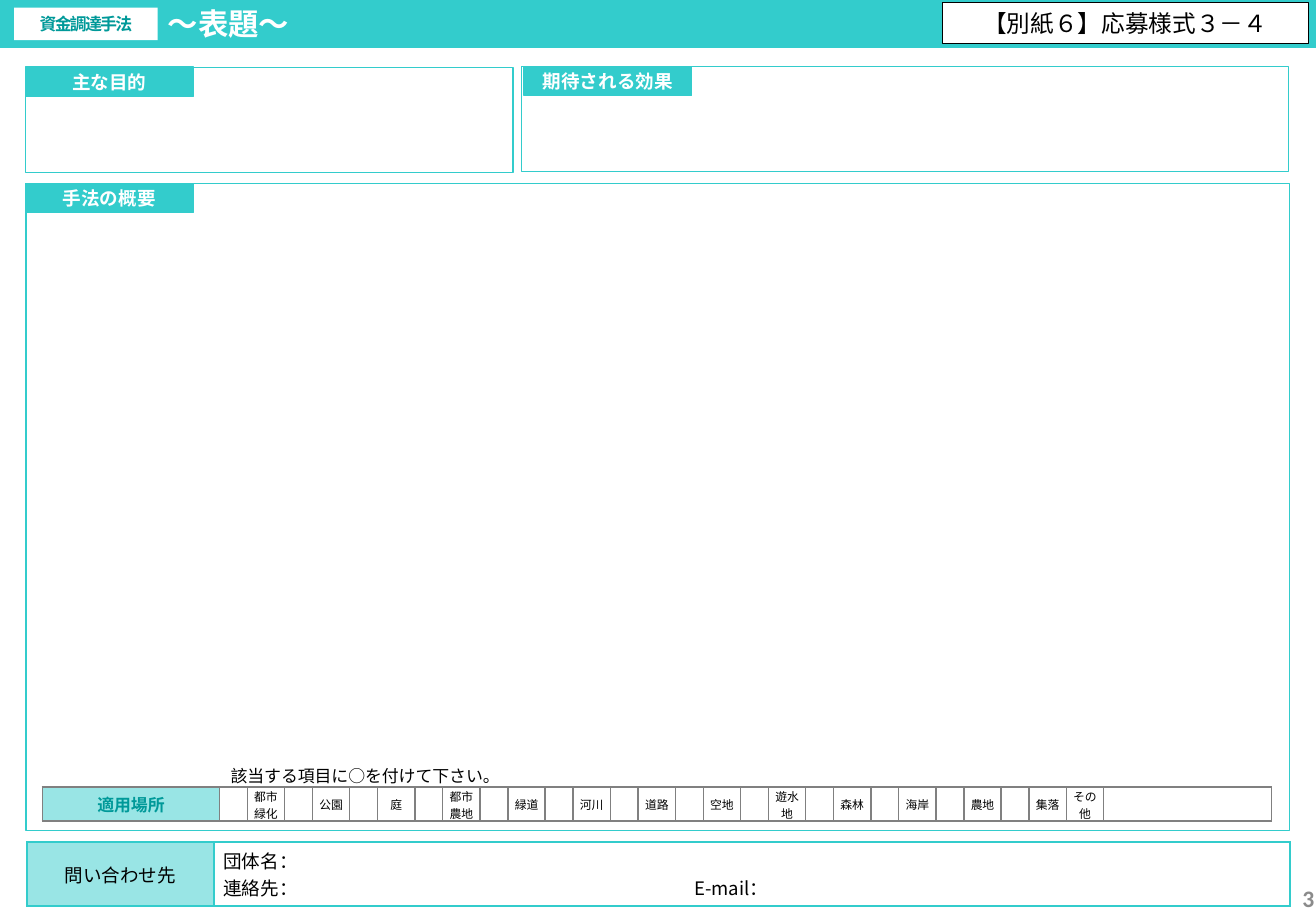
from pptx import Presentation
from pptx.dml.color import RGBColor
from pptx.enum.shapes import MSO_SHAPE
from pptx.enum.text import MSO_ANCHOR, PP_ALIGN
from pptx.oxml.ns import qn
from pptx.util import Pt
from lxml.etree import SubElement

TEAL = RGBColor(0x33, 0xCC, 0xCC)
PALE_TEAL = RGBColor(0x99, 0xE5, 0xE5)
DARK_TEAL = RGBColor(0x00, 0x99, 0x99)
WHITE = RGBColor(0xFF, 0xFF, 0xFF)
BLACK = RGBColor(0x00, 0x00, 0x00)
GRAY = RGBColor(0x80, 0x80, 0x80)
PAGE_GRAY = RGBColor(0x8B, 0x8B, 0x8B)
JAPANESE = "Noto Sans CJK JP"
SIDES = ("left", "top", "right", "bottom")
PLACES = ["都市\n緑化", "公園", "庭", "都市\n農地", "緑道", "河川", "道路",
          "空地", "遊水地", "森林", "海岸", "農地", "集落"]


def apply(target, values):
    """Set each attribute named in values on the target."""
    for name, value in values.items():
        setattr(target, name, value)


def write(holder, text, size, color=BLACK, bold=False, align=PP_ALIGN.CENTER,
          insets=(0, 0, 0, 0), font=JAPANESE, spacing=0):
    """Write text, one paragraph a line, into a shape's frame or a cell."""
    apply(holder, {f"margin_{side}": Pt(inset) for side, inset in zip(SIDES, insets)})
    holder.vertical_anchor = MSO_ANCHOR.MIDDLE
    frame = getattr(holder, "text_frame", holder)
    frame.word_wrap = True
    for index, line in enumerate(text.split("\n")):
        para = frame.add_paragraph() if index else frame.paragraphs[0]
        para.alignment = align
        if not line:
            para._p.get_or_add_endParaRPr().set("sz", str(size * 100))
            continue
        span = para.add_run()
        span.text = line
        apply(span.font, {"size": Pt(size), "bold": bold, "name": font})
        span.font.color.rgb = color
        properties = span._r.get_or_add_rPr()
        SubElement(properties, qn("a:ea"), typeface=font)
        if spacing:
            properties.set("spc", str(spacing * 100))


def add_box(page, place, fill, line=None, width=0.75):
    """Add a plain rectangle and return its text frame."""
    box = page.shapes.add_shape(MSO_SHAPE.RECTANGLE, *map(Pt, place))
    box.shadow.inherit = False
    box.fill.solid()
    box.fill.fore_color.rgb = fill
    if line is None:
        box.line.fill.background()
    else:
        box.line.color.rgb = line
        box.line.width = Pt(width)
    return box.text_frame


def add_section(page, place, title, tab_left):
    """Add an outlined section with a title tab in its top left corner."""
    add_box(page, place, WHITE, TEAL)
    tab = add_box(page, (tab_left, place[1], 99.4, 17.3), TEAL, TEAL)
    write(tab, title, 11, WHITE, True)


def add_label(page, place, text, size, **style):
    """Add a text box."""
    box = page.shapes.add_textbox(*map(Pt, place))
    write(box.text_frame, text, size, **style)


def add_row_table(page, place, widths, line):
    """Add a one-row table with ruled cells and return the cells."""
    table = page.shapes.add_table(1, len(widths), *map(Pt, place)).table
    apply(table, {"first_row": False, "horz_banding": False})
    for column, width in zip(table.columns, widths):
        column.width = Pt(width)
    cells = list(table.rows[0].cells)
    for cell in cells:
        properties = cell._tc.get_or_add_tcPr()
        for side in "LRTB":
            border = SubElement(properties, qn(f"a:ln{side}"), w=str(Pt(1)))
            paint = SubElement(border, qn("a:solidFill"))
            SubElement(paint, qn("a:srgbClr"), val=str(line))
        cell.fill.background()
    cells[0].fill.solid()
    cells[0].fill.fore_color.rgb = PALE_TEAL
    return cells


def add_contact_table(page):
    """Add the contact row with a tab stop before the e-mail entry."""
    heading, entry = add_row_table(page, (15.9, 499, 748.8, 37.9), (110.9, 637.9), TEAL)
    entry.fill.solid()
    entry.fill.fore_color.rgb = WHITE
    insets = (5.6, 2.8, 5.6, 2.8)
    write(heading, "問い合わせ先", 11, insets=insets)
    write(entry, "団体名：\n連絡先：\tE-mail：", 11, align=PP_ALIGN.LEFT, insets=insets)
    stops = SubElement(entry.text_frame.paragraphs[1]._p.get_or_add_pPr(), qn("a:tabLst"))
    SubElement(stops, qn("a:tab"), pos=str(Pt(279)), algn="l")


def add_place_table(page):
    """Add the row of places, each with an empty cell for a mark."""
    widths = [105] + [16.5, 22.13] * len(PLACES) + [22.13, 99.5]
    texts = [text for name in PLACES for text in ("", name)] + ["その\n他", ""]
    heading, *cells = add_row_table(page, (25.1, 466.5, 729, 20.1), widths, GRAY)
    insets = (0.7, 0.7, 0.7, 0)
    write(heading, "適用場所", 10, DARK_TEAL, True, insets=insets)
    for cell, text in zip(cells, texts):
        write(cell, text, 7, insets=insets)


def main():
    """Build the application form slide."""
    deck = Presentation()
    apply(deck, {"slide_width": Pt(780), "slide_height": Pt(540)})
    page = deck.slides.add_slide(deck.slide_layouts[6])
    header = add_box(page, (0, 0, 780, 28.3), TEAL, TEAL, 1)
    write(header, "～表題～", 18, WHITE, True, PP_ALIGN.LEFT, (99.4, 3.6, 7.2, 3.6))
    add_section(page, (15.1, 39.8, 289, 62.5), "主な目的", 15.1)
    add_contact_table(page)
    add_section(page, (309.2, 39.5, 454.4, 62.3), "期待される効果", 310.6)
    add_section(page, (15.5, 108.7, 748.8, 383.5), "手法の概要", 15.1)
    badge = add_box(page, (8.4, 4.5, 85, 19.3), WHITE)
    write(badge, "資金調達手法", 10, DARK_TEAL, True, spacing=-1)
    add_label(page, (610, 517.7, 169, 29 - 7), "3", 14, color=PAGE_GRAY, bold=True,
              align=PP_ALIGN.RIGHT, insets=(0, 7, 0, 0), font="Calibri")
    add_place_table(page)
    add_label(page, (129.6, 450, 174.2, 19.4), "該当する項目に○を付けて下さい。", 10,
              align=PP_ALIGN.LEFT, insets=(7.2, 0, 7.2, 0))
    form = add_box(page, (558.5, 1.3, 217, 24.5), WHITE, BLACK)
    write(form, "【別紙６】応募様式３－４", 14)
    deck.save("out.pptx")


if __name__ == "__main__":
    main()
